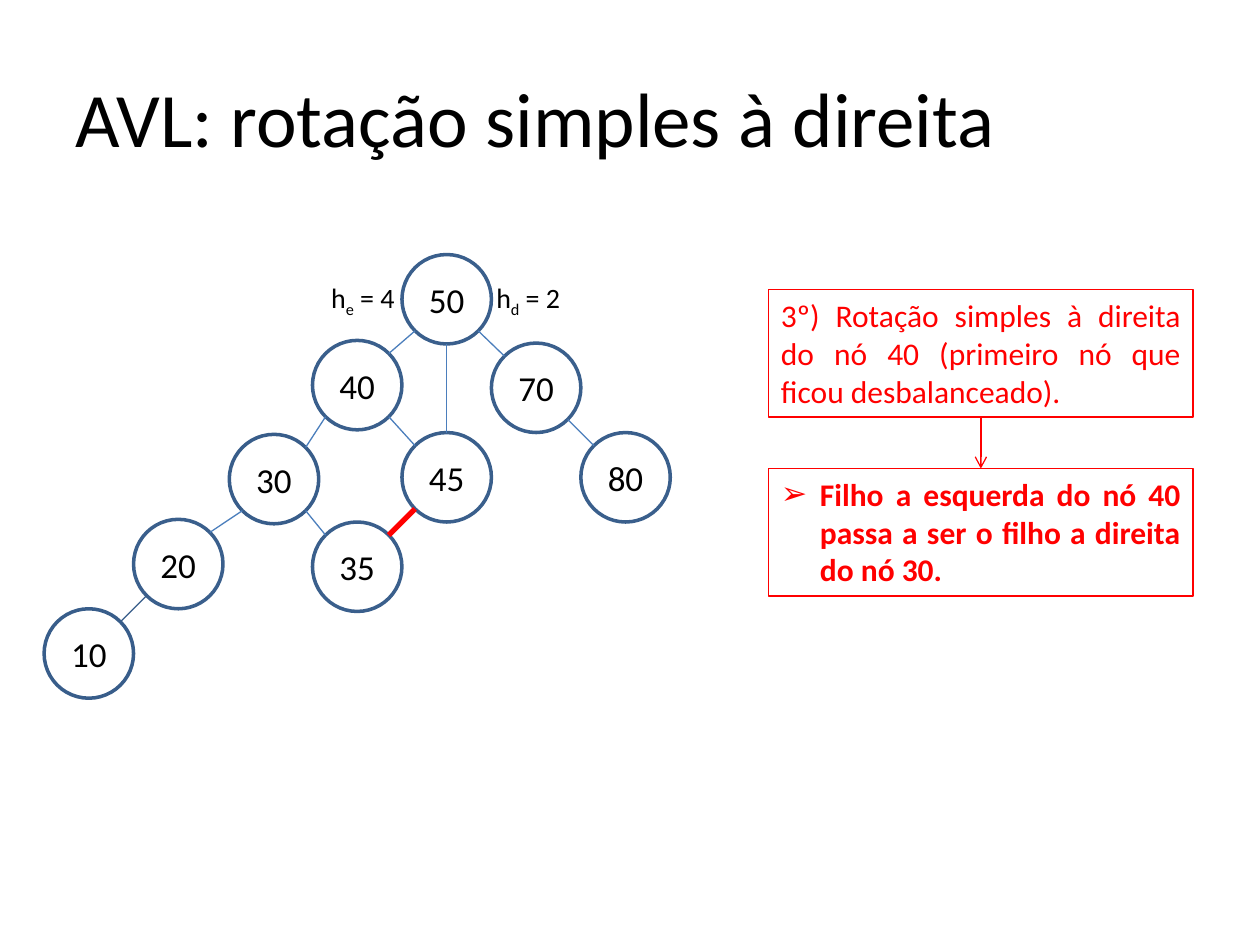
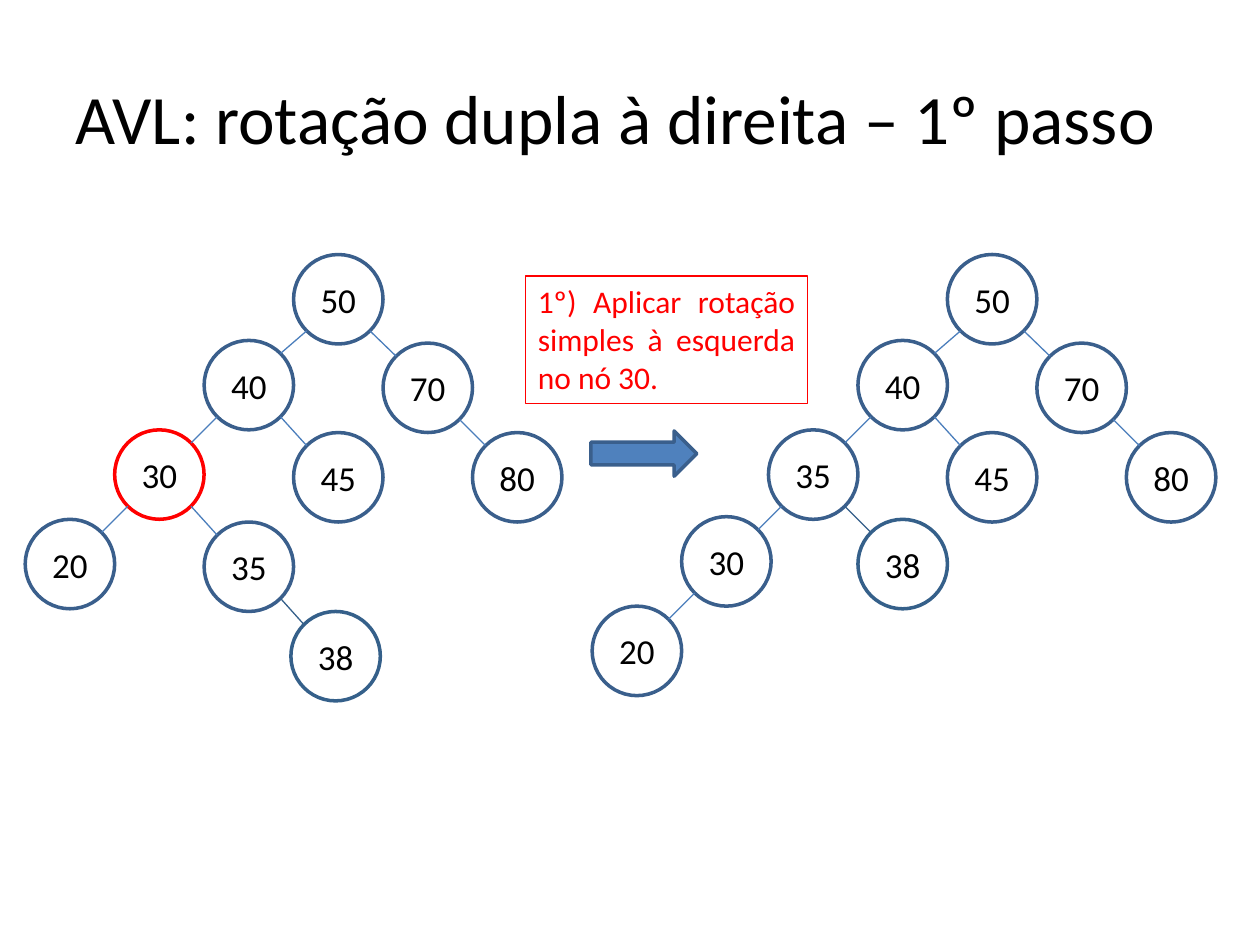
from dataclasses import dataclass

from lxml import etree
from pptx import Presentation
from pptx import util as u
from pptx.dml.color import RGBColor
from pptx.enum import shapes, text
from pptx.oxml import ns


@dataclass(frozen=True)
class Theme:
    font: str = "Calibri"
    bullet_font: str = "Arial"
    ink: str = "000000"
    alert: str = "FF0000"
    outline: str = "3A5F8C"
    edge: str = "4B7EBC"
    inserted: str = "385D8A"
    rotated: str = "35608A"
    arrow: str = "4F81BD"
    title_size: float = 44
    long_title_size: float = 39.6
    node_size: float = 20
    note_size: float = 18
    label_size: float = 16
    thin: float = 0.75
    medium: float = 2
    thick: float = 3


THEME = Theme()
COLUMNS, ROWS = 100, 75
SLIDE_WIDTH, SLIDE_HEIGHT = u.Inches(10), u.Inches(7.5)
DIAGONAL = 0.5 ** 0.5


def x_of(columns):
    return round(SLIDE_WIDTH * columns / COLUMNS)


def y_of(rows):
    return round(SLIDE_HEIGHT * rows / ROWS)


@dataclass(frozen=True)
class Box:
    """An area measured in columns and rows of the slide grid."""
    left: float
    top: float
    width: float
    height: float

    def area(self, left, top, width, height):
        """The area covering the given shares of this one."""
        return Box(self.left + left * self.width, self.top + top * self.height,
                   width * self.width, height * self.height)

    def lengths(self):
        return (x_of(self.left), y_of(self.top),
                x_of(self.width), y_of(self.height))


@dataclass(frozen=True)
class Node:
    """A tree node: column and row count in node diameters."""
    key: int
    column: float
    row: float
    parent: int = 0
    outline: str = THEME.outline
    edge: str = THEME.edge


# Text and lines

def write(shape, content, size, color=THEME.ink, bold=False, align="LEFT",
          anchor="TOP", fit="NONE", wrap=True, bullet=None):
    """Write one paragraph; pieces between underscores become subscripts."""
    frame = shape.text_frame
    frame.word_wrap = wrap
    frame.vertical_anchor = getattr(text.MSO_ANCHOR, anchor)
    frame.auto_size = getattr(text.MSO_AUTO_SIZE, fit)
    paragraph = frame.paragraphs[0]
    paragraph.alignment = getattr(text.PP_ALIGN, align)
    for index, piece in enumerate(content.split("_")):
        run = paragraph.add_run()
        run.text = piece
        run.font.name = THEME.font
        run.font.size = u.Pt(size)
        run.font.bold = bold
        run.font.color.rgb = RGBColor.from_string(color)
        if index % 2:
            run._r.get_or_add_rPr().set("baseline", "-25000")
    if bullet:
        properties = paragraph._p.get_or_add_pPr()
        indent = u.Inches(0.31)
        properties.set("marL", str(indent))
        properties.set("indent", str(-indent))
        font = etree.SubElement(properties, ns.qn("a:buFont"))
        font.set("typeface", THEME.bullet_font)
        etree.SubElement(properties, ns.qn("a:buChar")).set("char", bullet)


def set_line(shape, color, width):
    shape.line.color.rgb = RGBColor.from_string(color)
    shape.line.width = u.Pt(width)


def add_outlined(slide, kind, box, color, width, fill=None):
    shape = slide.shapes.add_shape(kind, *box.lengths())
    shape.shadow.inherit = False
    set_line(shape, color, width)
    if fill:
        shape.fill.solid()
        shape.fill.fore_color.rgb = RGBColor.from_string(fill)
    else:
        shape.fill.background()
    return shape


def add_line(slide, start, end, color, width):
    connector = slide.shapes.add_connector(
        shapes.MSO_CONNECTOR.STRAIGHT, x_of(start[0]), y_of(start[1]),
        x_of(end[0]), y_of(end[1]))
    set_line(connector, color, width)
    etree.SubElement(connector._element.spPr, ns.qn("a:effectLst"))
    return connector


# Tree

def add_edge(slide, parent, child, color, width):
    """Join two circles, diagonally or straight down."""
    radius = parent.width / 2
    side = (child.left > parent.left) - (child.left < parent.left)
    shift_x = side * radius * DIAGONAL
    shift_y = radius * DIAGONAL if side else radius
    start = (parent.left + radius + shift_x, parent.top + radius + shift_y)
    end = (child.left + radius - shift_x, child.top + radius - shift_y)
    add_line(slide, start, end, color, width)


def add_tree(slide, box, nodes, extra_edges=()):
    """Draw a tree whose rightmost node ends at the right of the box."""
    diameter = box.width / (max(node.column for node in nodes) + 1)
    circles = {}
    for node in nodes:
        circle = Box(box.left + node.column * diameter,
                     box.top + node.row * diameter, diameter, diameter)
        circles[node.key] = circle
        shape = add_outlined(slide, shapes.MSO_SHAPE.OVAL, circle,
                             node.outline, THEME.medium)
        write(shape, str(node.key), THEME.node_size, align="CENTER",
              anchor="MIDDLE", wrap=False)
    edges = [(node.parent, node.key, node.edge, THEME.thin)
             for node in nodes if node.parent]
    for parent, child, color, width in edges + list(extra_edges):
        add_edge(slide, circles[parent], circles[child], color, width)


def top_nodes(root_column):
    """The five nodes that all trees share."""
    return [Node(50, root_column, 0),
            Node(40, root_column - 1, 0.96, 50),
            Node(70, root_column + 1, 0.99, 50),
            Node(80, root_column + 2, 1.99, 70),
            Node(45, root_column, 1.99, 40)]


# Notes and labels

def add_note(slide, box, content, **text_format):
    note = add_outlined(slide, shapes.MSO_SHAPE.RECTANGLE, box,
                        THEME.alert, THEME.thin)
    write(note, content, THEME.note_size, THEME.alert, align="JUSTIFY",
          fit="SHAPE_TO_FIT_TEXT", **text_format)
    return note


def add_note_pair(slide, box, rule, consequence):
    """Two stacked notes joined by an arrow."""
    share = 0.416
    upper = add_note(slide, box.area(0, 0, 1, share), rule)
    lower = add_note(slide, box.area(0, 1 - share, 1, share), consequence,
                     bold=True, bullet="➢")
    middle = box.left + box.width / 2
    arrow = add_line(slide, (middle, box.top), (middle, box.top + box.height),
                     THEME.alert, THEME.thin)
    arrow.begin_connect(upper, 2)
    arrow.end_connect(lower, 0)
    head = etree.SubElement(arrow.line._get_or_add_ln(), ns.qn("a:tailEnd"))
    head.set("type", "arrow")


def add_height_labels(slide, box, left_label, right_label):
    share = 0.373
    for start, label in ((0, left_label), (1 - share, right_label)):
        area = box.area(start, 0, share, 1)
        write(slide.shapes.add_textbox(*area.lengths()), label,
              THEME.label_size)


# Slides

def add_titled_slide(presentation, title, size):
    slide = presentation.slides.add_slide(presentation.slide_layouts[5])
    placeholder = slide.shapes.title
    area = Box(5, 3, 90, 12.5)
    (placeholder.left, placeholder.top,
     placeholder.width, placeholder.height) = area.lengths()
    write(placeholder, title, size, anchor="MIDDLE")
    return slide


def build_single_rotation(presentation):
    slide = add_titled_slide(presentation, "AVL: rotação simples à direita",
                             THEME.title_size)
    nodes = top_nodes(4) + [
        Node(30, 2.07, 2.01, 40, outline=THEME.inserted),
        Node(20, 1, 2.96, 30),
        Node(10, 0, 3.96, 20, THEME.inserted, THEME.inserted),
        Node(35, 3, 2.99, 30)]
    extra_edges = [(50, 45, THEME.edge, THEME.thin),
                   (45, 35, THEME.alert, THEME.thick)]
    add_tree(slide, Box(3.5, 20.2, 49.7, 35.2), nodes, extra_edges)
    add_height_labels(slide, Box(25.3, 21.8, 20.9, 3.7),
                      "h_e_ = 4", "h_d_ = 2")
    add_note_pair(
        slide, Box(61, 23, 33.7, 24.3),
        "3º) Rotação simples à direita do nó 40 (primeiro nó que ficou "
        "desbalanceado).",
        "Filho a esquerda do nó 40 passa a ser o filho a direita do nó 30.")


def build_double_rotation(presentation):
    slide = add_titled_slide(presentation,
                             "AVL: rotação dupla à direita – 1º passo",
                             THEME.long_title_size)
    before = top_nodes(3) + [
        Node(30, 1, 1.96, 40, outline=THEME.alert),
        Node(20, 0, 2.96, 30),
        Node(35, 2, 2.99, 30),
        Node(38, 2.97, 3.99, 35, THEME.rotated, THEME.rotated)]
    after = top_nodes(3.97) + [
        Node(35, 1.97, 1.96, 40),
        Node(30, 1, 2.93, 35),
        Node(20, 0, 3.93, 30),
        Node(38, 2.97, 2.96, 35, THEME.rotated, THEME.rotated)]
    add_tree(slide, Box(2, 20.2, 42.6, 35.4), before)
    add_tree(slide, Box(47, 20.2, 49.5, 35), after)
    # The step between both trees
    add_note(slide, Box(41.7, 21.9, 22.4, 10.1),
             "1º) Aplicar rotação simples à esquerda no nó 30.")
    add_outlined(slide, shapes.MSO_SHAPE.RIGHT_ARROW,
                 Box(46.9, 34.2, 8.4, 3.6), THEME.outline, THEME.medium,
                 THEME.arrow)


def main():
    presentation = Presentation()
    presentation.slide_width = SLIDE_WIDTH
    presentation.slide_height = SLIDE_HEIGHT
    build_single_rotation(presentation)
    build_double_rotation(presentation)
    presentation.save("out.pptx")


if __name__ == "__main__":
    main()
